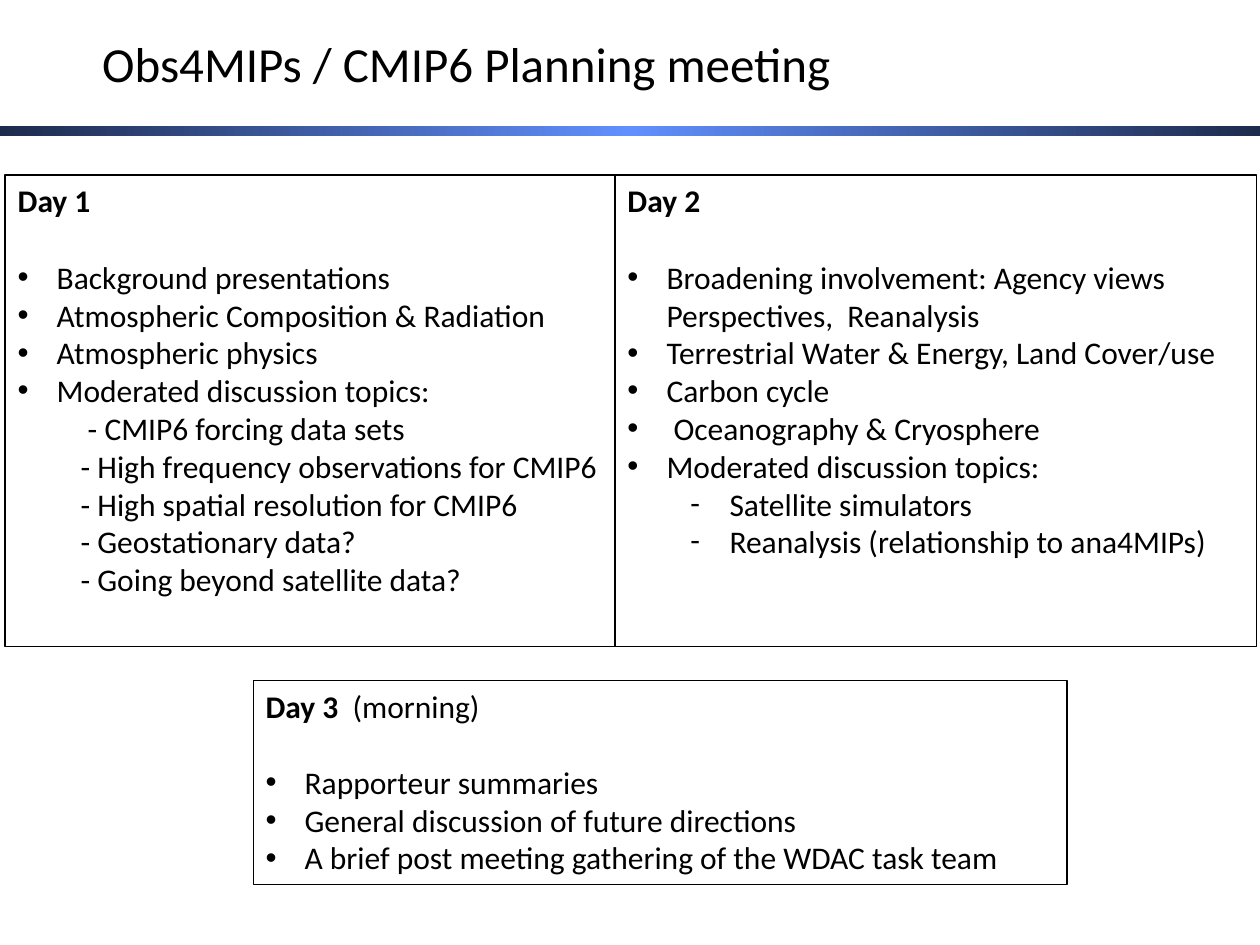
import copy

import lxml.etree
import pptx
import pptx.dml.color
import pptx.enum.shapes
import pptx.enum.text
import pptx.oxml.ns
import pptx.util

COLORS = {"ink": "000000", "bar edge": "1D2B4C", "bar middle": "618FFD"}
FONT = "Calibri"
STYLES = {
    "heading": (0, 0, 0, None),
    "bullet": (0, 0.31, -0.31, "•"),
    "plain": (1, 0.5, 0, None),
    "dash": (1, 0.81, -0.31, "-"),
}
DAYS = [
    ((0.4, 18.53, 48.4, 49.87), "Day 1", "", [
        ("bullet", "Background presentations"),
        ("bullet", "Atmospheric Composition & Radiation"),
        ("bullet", "Atmospheric physics"),
        ("bullet", "Moderated discussion topics:"),
        ("plain", " - CMIP6 forcing data sets"),
        ("plain", "- High frequency observations for CMIP6"),
        ("plain", "- High spatial resolution for CMIP6"),
        ("plain", "- Geostationary data?"),
        ("plain", "- Going beyond satellite data?"),
    ]),
    ((48.8, 18.53, 50.9, 49.87), "Day 2", "", [
        ("bullet", "Broadening involvement: Agency views Perspectives,  Reanalysis"),
        ("bullet", "Terrestrial Water & Energy, Land Cover/use"),
        ("bullet", "Carbon cycle"),
        ("bullet", " Oceanography & Cryosphere"),
        ("bullet", "Moderated discussion topics:"),
        ("dash", "Satellite simulators"),
        ("dash", "Reanalysis (relationship to ana4MIPs)"),
    ]),
    ((20.1, 72, 64.6, 21.6), "Day 3  ", "(morning)", [
        ("bullet", "Rapporteur summaries"),
        ("bullet", "General discussion of future directions"),
        ("bullet", "A brief post meeting gathering of the WDAC task team"),
    ]),
]

deck = pptx.Presentation()
deck.slide_width = pptx.util.Inches(10)
deck.slide_height = pptx.util.Inches(7.5)
page = deck.slides.add_slide(deck.slide_layouts[3])


def place(box, percents):
    left, top, width, height = percents
    box.left = int(deck.slide_width * left / 100)
    box.top = int(deck.slide_height * top / 100)
    box.width = int(deck.slide_width * width / 100)
    box.height = int(deck.slide_height * height / 100)


def format_text(frame, size):
    frame.word_wrap = True
    frame.auto_size = pptx.enum.text.MSO_AUTO_SIZE.NONE
    frame.vertical_anchor = pptx.enum.text.MSO_ANCHOR.TOP
    for para in frame.paragraphs:
        for span in para.runs:
            span.font.name = FONT
            span.font.size = pptx.util.Pt(size)
            span.font.color.rgb = pptx.dml.color.RGBColor.from_string(COLORS["ink"])


bar = page.shapes.add_shape(pptx.enum.shapes.MSO_SHAPE.RECTANGLE, 0, 0, 0, 0)
place(bar, (0, 13.33, 100, 1.07))
bar.shadow.inherit = False
bar.line.fill.background()
bar.fill.gradient()
bar.fill.gradient_angle = 0
stop_list = bar._element.find(".//" + pptx.oxml.ns.qn("a:gsLst"))
stop_list.append(copy.deepcopy(stop_list[0]))
for stop, position, name in zip(
    bar.fill.gradient_stops, (0, 0.5, 1), ("bar edge", "bar middle", "bar edge")
):
    stop.position = position
    stop.color.rgb = pptx.dml.color.RGBColor.from_string(COLORS[name])

title = page.shapes.title
place(title, (1.2, 1.6, 71.6, 8.67))
title.text_frame.text = "Obs4MIPs / CMIP6 Planning meeting"
title.text_frame.paragraphs[0].alignment = pptx.enum.text.PP_ALIGN.CENTER
title.text_frame.paragraphs[0].line_spacing = 1.2
format_text(title.text_frame, 28)

boxes = [page.placeholders[1], page.placeholders[2], page.shapes.add_textbox(0, 0, 0, 0)]
for box, (percents, day, note, topics) in zip(boxes, DAYS):
    place(box, percents)
    box.line.color.rgb = pptx.dml.color.RGBColor.from_string(COLORS["ink"])
    box.line.width = pptx.util.Pt(0.75)
    frame = box.text_frame
    lines = [("heading", day)] + topics
    frame.text = "\n".join(text for style, text in lines)
    for para, (style, text) in zip(frame.paragraphs, lines):
        level, margin, indent, mark = STYLES[style]
        para.level = level
        para.alignment = pptx.enum.text.PP_ALIGN.LEFT
        para.space_before = pptx.util.Pt(0)
        para.space_after = pptx.util.Pt(22 if style == "heading" else 0)
        para.runs[0].font.bold = style == "heading"
        properties = para._p.get_or_add_pPr()
        properties.set("marL", str(pptx.util.Inches(margin)))
        properties.set("indent", str(pptx.util.Inches(indent)))
        if mark:
            face = lxml.etree.SubElement(properties, pptx.oxml.ns.qn("a:buFont"))
            face.set("typeface", "Arial" if mark == "•" else FONT)
            bullet = lxml.etree.SubElement(properties, pptx.oxml.ns.qn("a:buChar"))
            bullet.set("char", mark)
        else:
            lxml.etree.SubElement(properties, pptx.oxml.ns.qn("a:buNone"))
    if note:
        span = frame.paragraphs[0].add_run()
        span.text = note
        span.font.bold = False
    format_text(frame, 18)

deck.save("out.pptx")
